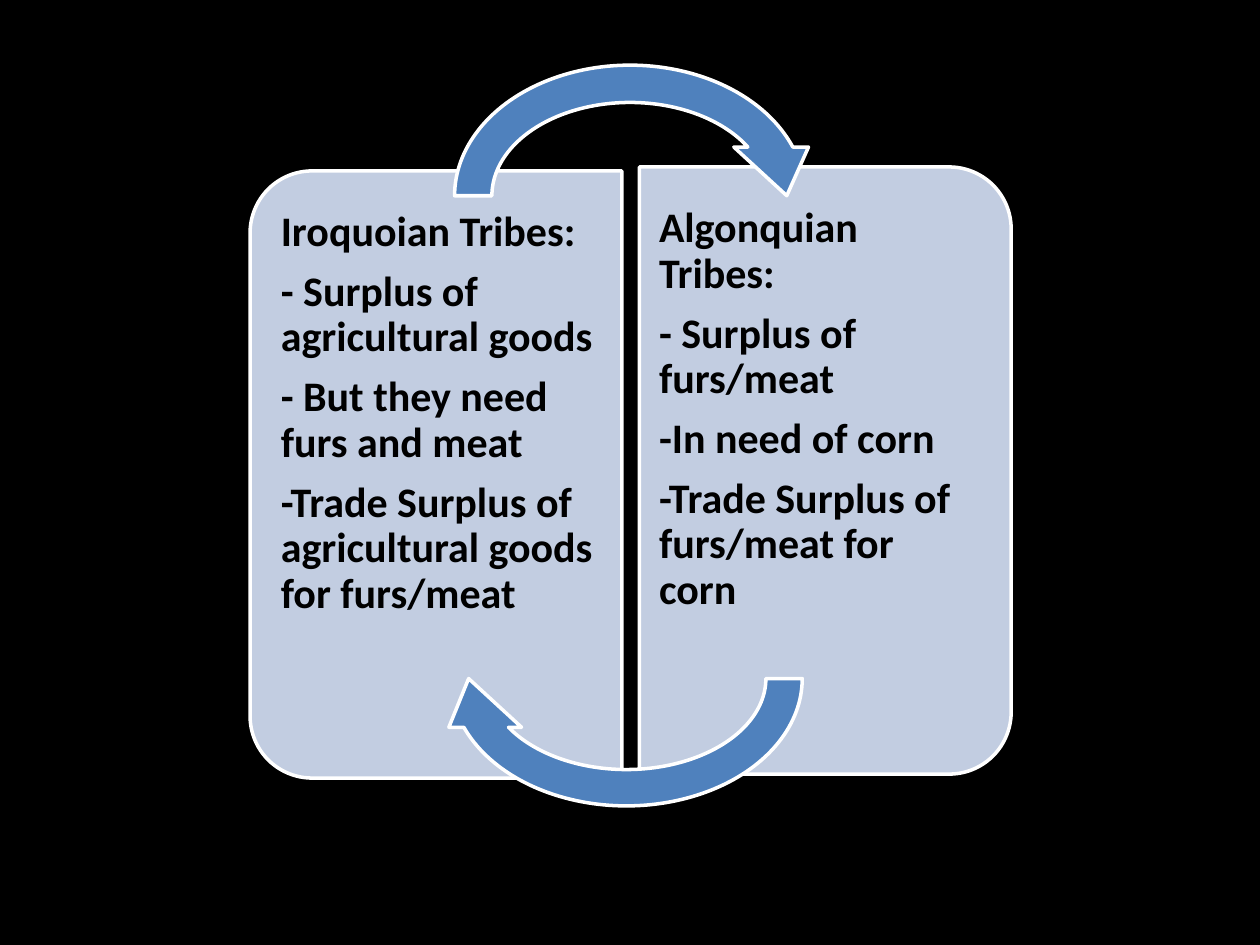
from dataclasses import dataclass

from pptx import Presentation
from pptx.dml.color import RGBColor
from pptx.enum.shapes import MSO_SHAPE
from pptx.slide import Slide
from pptx.util import Pt

COLORS = {"back": "000000", "panel": "C2CDE1", "arrow": "4F81BD",
          "edge": "FFFFFF", "text": "000000"}
PANEL = (347, 212.4)
TEXT = (201.6, 326.2)
LEFT = ["Iroquoian Tribes:", "- Surplus of agricultural goods",
        "- But they need furs and meat",
        "-Trade Surplus of agricultural goods for furs/meat"]
RIGHT = ["Algonquian Tribes:", "- Surplus of furs/meat", "-In need of corn",
         "-Trade Surplus of furs/meat for corn"]


def color(name):
    return RGBColor.from_string(COLORS[name])


@dataclass
class Deck:
    """Draw styled panels, text and arrows on one slide."""

    slide: Slide
    font: str = "Calibri"
    size: float = 24
    edge: float = 2

    def back(self):
        fill = self.slide.background.fill
        fill.solid()
        fill.fore_color.rgb = color("back")

    def shape(self, kind, box, fill, turn, adjust):
        item = self.slide.shapes.add_shape(kind, *map(Pt, box))
        item.shadow.inherit = False
        item.rotation = turn
        for index, value in enumerate(adjust):
            item.adjustments[index] = value
        item.fill.solid()
        item.fill.fore_color.rgb = color(fill)
        item.line.color.rgb = color("edge")
        item.line.width = Pt(self.edge)

    def panel(self, left, top, turn):
        self.shape(MSO_SHAPE.ROUND_2_SAME_RECTANGLE, (left, top, *PANEL),
                   "panel", turn, (0.167, 0))

    def arrow(self, box, turn):
        self.shape(MSO_SHAPE.CIRCULAR_ARROW, box, "arrow", turn,
                   (0.125, 11.423, 204.577, 108, 0.125))

    def text(self, left, top, lines, inset):
        box = self.slide.shapes.add_textbox(*map(Pt, (left, top, *TEXT)))
        frame = box.text_frame
        frame.word_wrap = True
        frame.margin_left, frame.margin_right = map(Pt, inset)
        frame.margin_top = frame.margin_bottom = Pt(12.2)
        frame.text = "\n".join(lines)
        for para in frame.paragraphs:
            para.line_spacing = 0.9
            para.space_after = Pt(0.35 * self.size)
            para.font.name = self.font
            para.font.size = Pt(self.size)
            para.font.bold = True
            para.font.color.rgb = color("text")


def main():
    show = Presentation()
    show.slide_width, show.slide_height = Pt(720), Pt(540)
    deck = Deck(show.slides.add_slide(show.slide_layouts[6]))
    deck.back()
    deck.panel(75.6, 164.9, 270)
    deck.text(153.4, 108, LEFT, (7.2, 10.8))
    deck.panel(298.1, 162.7, 90)
    deck.text(365.8, 105.8, RIGHT, (10.8, 7.2))
    deck.arrow((249.1, 26.6, 221.8, 170.6), 0)
    deck.arrow((247, 304.6, 221.8, 166.3), 180)
    show.save("out.pptx")


if __name__ == "__main__":
    main()
